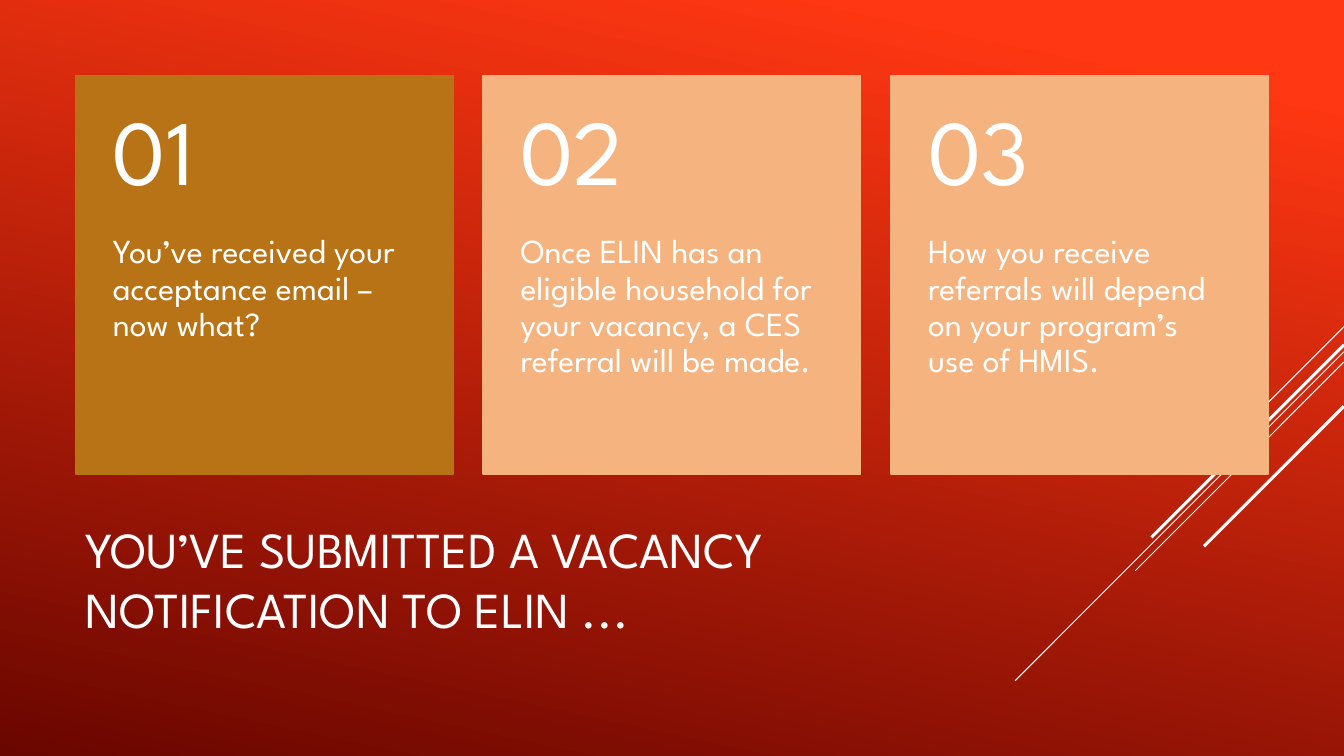
"""Build a slide with three numbered cards above a title on a red gradient."""
import pptx
import pptx.dml.color
import pptx.enum.shapes
import pptx.enum.text
import pptx.oxml
import pptx.oxml.ns
import pptx.util

COLORS = {
    "bright": "FF3712",
    "dark": "6A0600",
    "white": "FFFFFF",
    "ochre": "B97317",
    "peach": "F5B37F",
}
FONT = "League Spartan"
SLIDE_WIDTH, SLIDE_HEIGHT = 960, 540
MARGIN = 54
CARD_WIDTH, CARD_HEIGHT, CARD_STEP = 269.5, 284.4, 291.2
NUMBER_HEIGHT = 113.8
INSET = 26.6

STREAKS = [
    (233.3, 72, 0.75),
    (251.3, 234.9, 0.75),
    (258.6, 149, 0.75),
    (246.3, 137.5, 2.25),
    (290.2, 100, 2.25),
]
CARDS = [
    ("01", "You’ve received your acceptance email – now what?", "ochre"),
    ("02", "Once ELIN has an eligible household for your vacancy, a CES referral will be made.", "peach"),
    ("03", "How you receive referrals will depend on your program’s use of HMIS.", "peach"),
]


class SlideBuilder:
    def __init__(self, slide):
        self.slide = slide

    def color(self, name):
        return pptx.dml.color.RGBColor.from_string(COLORS[name])

    def points(self, *lengths):
        return [pptx.util.Pt(length) for length in lengths]

    def background(self, angle, stops):
        fill = self.slide.background.fill
        fill.gradient()
        fill.gradient_angle = angle
        for stop, (position, name) in zip(fill.gradient_stops, stops):
            stop.position = position
            stop.color.rgb = self.color(name)

    def line(self, start_x, start_y, end_x, end_y, width):
        connector = self.slide.shapes.add_connector(
            pptx.enum.shapes.MSO_CONNECTOR.STRAIGHT,
            *self.points(start_x, start_y, end_x, end_y))
        connector.line.color.rgb = self.color("white")
        connector.line.width = pptx.util.Pt(width)
        properties = connector._element.spPr
        properties.append(pptx.oxml.parse_xml(
            f"<a:effectLst {pptx.oxml.ns.nsdecls('a')}/>"))

    def rectangle(self, left, top, width, height, name):
        shape = self.slide.shapes.add_shape(
            pptx.enum.shapes.MSO_SHAPE.RECTANGLE,
            *self.points(left, top, width, height))
        shape.shadow.inherit = False
        shape.fill.solid()
        shape.fill.fore_color.rgb = self.color(name)
        shape.line.color.rgb = self.color(name)
        shape.line.width = pptx.util.Pt(1.25)

    def text(self, box, words, size, insets, anchor="MIDDLE", spacing=1.0):
        frame = self.slide.shapes.add_textbox(*self.points(*box)).text_frame
        frame.word_wrap = True
        frame.vertical_anchor = pptx.enum.text.MSO_ANCHOR[anchor]
        (frame.margin_left, frame.margin_top,
         frame.margin_right, frame.margin_bottom) = self.points(*insets)
        paragraph = frame.paragraphs[0]
        paragraph.text = words
        paragraph.line_spacing = spacing
        paragraph.font.name = FONT
        paragraph.font.size = pptx.util.Pt(size)
        paragraph.font.color.rgb = self.color("white")

    def card(self, left, number, words, name):
        self.rectangle(left, MARGIN, CARD_WIDTH, CARD_HEIGHT, name)
        self.text((left, MARGIN + NUMBER_HEIGHT, CARD_WIDTH, CARD_HEIGHT - NUMBER_HEIGHT),
                  words, 24, (INSET, 0, INSET, 26), "TOP", 0.9)
        self.text((left, MARGIN, CARD_WIDTH, NUMBER_HEIGHT),
                  number, 66, (INSET, 13, INSET, 13), spacing=0.9)


def main():
    presentation = pptx.Presentation()
    presentation.slide_width = pptx.util.Pt(SLIDE_WIDTH)
    presentation.slide_height = pptx.util.Pt(SLIDE_HEIGHT)
    builder = SlideBuilder(presentation.slides.add_slide(presentation.slide_layouts[6]))

    builder.background(258, [(0.1, "bright"), (1, "dark")])
    for top, run, width in STREAKS:
        builder.line(SLIDE_WIDTH, top, SLIDE_WIDTH - run, top + run, width)
    builder.text((MARGIN, 353.5, 672, 118.8),
                 "YOU’VE SUBMITTED A VACANCY NOTIFICATION TO ELIN ...",
                 36, (7.2, 3.6, 7.2, 3.6))
    for index, (number, words, name) in enumerate(CARDS):
        builder.card(MARGIN + index * CARD_STEP, number, words, name)

    presentation.save("out.pptx")


if __name__ == "__main__":
    main()
